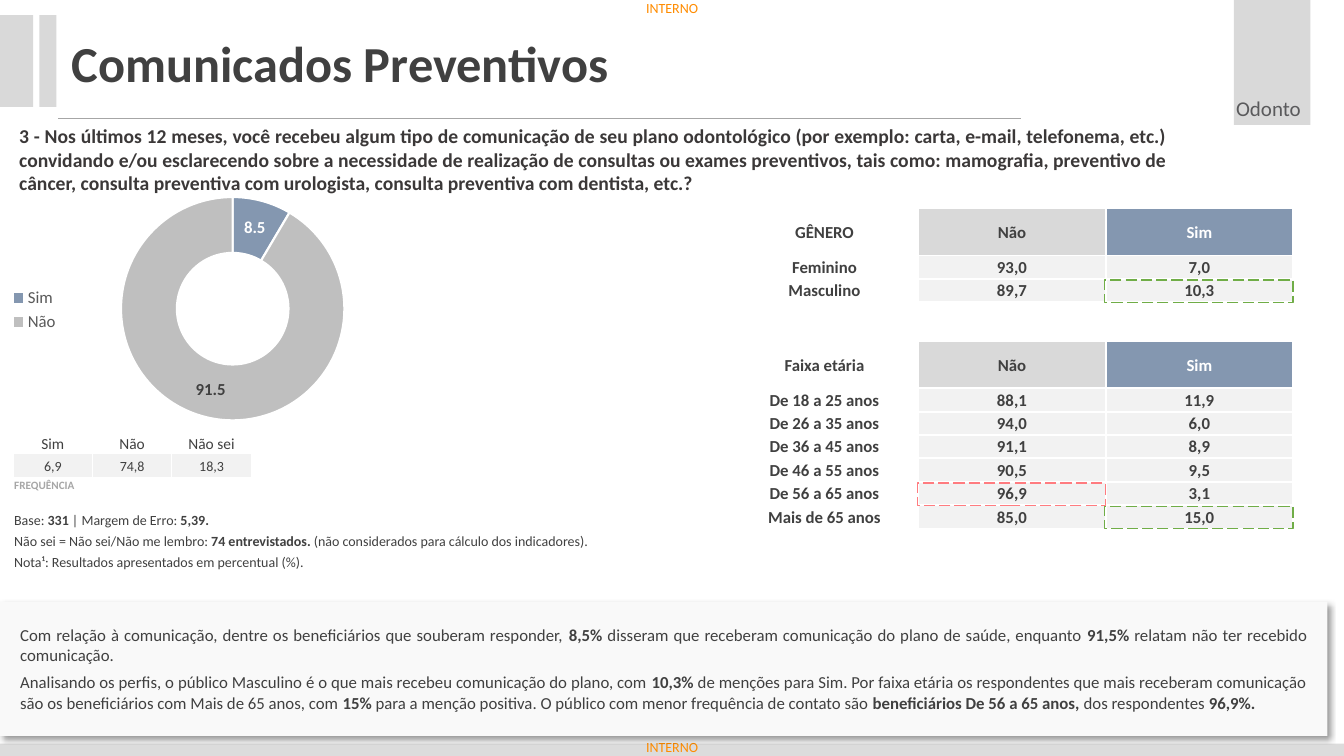
from lxml import etree
from pptx import Presentation
from pptx.chart.data import CategoryChartData
from pptx.dml.color import RGBColor
from pptx.enum.chart import XL_CHART_TYPE, XL_LEGEND_POSITION
from pptx.enum.dml import MSO_LINE
from pptx.enum.shapes import MSO_CONNECTOR, MSO_SHAPE
from pptx.enum.text import MSO_ANCHOR as ANCHOR, PP_ALIGN as ALIGN
from pptx.oxml import parse_xml
from pptx.oxml.ns import nsdecls, qn
from pptx.util import Pt

COLORS = {
    "text": "404040", "question": "3B3838", "tag": "FF8C00", "area": "5A5A5C",
    "muted": "A6A6A6", "legend": "595959", "block": "D9D9D9", "footer": "DCDCDC",
    "cell": "F2F2F2", "panel": "F9F9F9", "sim": "8497B0", "nao": "BFBFBF",
    "white": "FFFFFF", "high": "70AD47", "low": "FF7C80",
}

QUESTION = (
    "3 - Nos últimos 12 meses, você recebeu algum tipo de comunicação de seu plano odontológico "
    "(por exemplo: carta, e-mail, telefonema, etc.) convidando e/ou esclarecendo sobre a necessidade "
    "de realização de consultas ou exames preventivos, tais como: mamografia, preventivo de câncer, "
    "consulta preventiva com urologista, consulta preventiva com dentista, etc.?")
PROFILE = [
    ("GÊNERO", "Não", "Sim"),
    ("Feminino", "93,0", "7,0"),
    ("Masculino", "89,7", "10,3"),
    ("", "", ""),
    ("Faixa etária", "Não", "Sim"),
    ("De 18 a 25 anos", "88,1", "11,9"),
    ("De 26 a 35 anos", "94,0", "6,0"),
    ("De 36 a 45 anos", "91,1", "8,9"),
    ("De 46 a 55 anos", "90,5", "9,5"),
    ("De 56 a 65 anos", "96,9", "3,1"),
    ("Mais de 65 anos", "85,0", "15,0"),
]
HIGHLIGHTS = [(2, 2, "high"), (9, 1, "low"), (10, 2, "high")]
FREQUENCY = [("Sim", "Não", "Não sei"), ("6,9", "74,8", "18,3"), ("FREQUÊNCIA", "", "")]
NOTES = [
    "Base: **331** | Margem de Erro: **5,39.**",
    "Não sei = Não sei/Não me lembro: **74 entrevistados.** (não considerados para cálculo dos indicadores).",
    "Nota¹: Resultados apresentados em percentual (%).",
]
ANALYSIS = [
    "Com relação à comunicação, dentre os beneficiários que souberam responder, **8,5%** disseram que "
    "receberam comunicação do plano de saúde, enquanto **91,5%** relatam não ter recebido comunicação.",
    "Analisando os perfis, o público Masculino é o que mais recebeu comunicação do plano, com **10,3% **de "
    "menções para Sim. Por faixa etária os respondentes que mais receberam comunicação são os beneficiários "
    "com Mais de 65 anos, com **15% **para a menção positiva. O público com menor frequência de contato são "
    "**beneficiários De 56 a 65 anos, **dos respondentes **96,9%.**",
]


def rgb(name):
    return RGBColor.from_string(COLORS[name])


def set_font(font, size, color="text", bold=False):
    for key, value in {"name": "Calibri", "size": Pt(size), "bold": bold}.items():
        setattr(font, key, value)
    font.color.rgb = rgb(color)


def write(p, text, size, color="text", bold=False, align=ALIGN.LEFT):
    """Fill a paragraph; text between double asterisks is bold."""
    p.alignment = align
    for i, part in enumerate(text.split("**")):
        if part:
            r = p.add_run()
            r.text = part
            set_font(r.font, size, color, bold or i % 2 == 1)


def set_frame(tf, insets=(7.2, 3.6), wrap=True, anchor=ANCHOR.TOP):
    x, y = (Pt(v) for v in insets)
    values = {"margin_left": x, "margin_right": x, "margin_top": y, "margin_bottom": y,
              "word_wrap": wrap, "vertical_anchor": anchor}
    for key, value in values.items():
        setattr(tf, key, value)


def add_text(slide, box, text, size, color, bold=False, align=ALIGN.LEFT, **frame):
    tf = slide.shapes.add_textbox(*map(Pt, box)).text_frame
    set_frame(tf, **frame)
    write(tf.paragraphs[0], text, size, color, bold, align)


def add_rect(slide, box, fill=None):
    sp = slide.shapes.add_shape(MSO_SHAPE.RECTANGLE, *map(Pt, box))
    sp.shadow.inherit = False
    if fill:
        sp.fill.solid()
        sp.fill.fore_color.rgb = rgb(fill)
        sp.line.fill.background()
    else:
        sp.fill.background()
    return sp


def add_frame(slide, width, height):
    """Footer band, corner blocks, rule and confidentiality tags."""
    add_rect(slide, (0, height - 8.8, width, 8.8), "footer")
    for box in [(-0.7, 10.8, 24.5, 65.5), (28.1, 10.8, 12.2, 65.5), (881.3, 0, 54.7, 89.3)]:
        add_rect(slide, box, "block")
    rule = slide.shapes.add_connector(MSO_CONNECTOR.STRAIGHT, Pt(41.8), Pt(84.3), Pt(729.4), Pt(84.3))
    rule.line.color.rgb = rgb("muted")
    rule.line.width = Pt(0.5)
    etree.SubElement(rule.element.spPr, qn("a:effectLst"))
    for top in (0, height - 12.2):
        add_text(slide, (461.5, top, 39.6, 12.2), "INTERNO", 10, "tag", insets=(0, 0), wrap=False)


def add_heading(slide, box):
    title = slide.shapes.title
    title.left, title.top, title.width, title.height = map(Pt, box)
    set_frame(title.text_frame)
    write(title.text_frame.paragraphs[0], "Comunicados Preventivos", 36, bold=True)


def add_grid(slide, left, top, col_widths, row_heights, border):
    """Table without style bands, with white borders of the given width."""
    box = (left, top, sum(col_widths), sum(row_heights))
    table = slide.shapes.add_table(len(row_heights), len(col_widths), *map(Pt, box)).table
    table.first_row = table.horz_banding = False
    for col, w in zip(table.columns, col_widths):
        col.width = Pt(w)
    for row, h in zip(table.rows, row_heights):
        row.height = Pt(h)
    for cell in table.iter_cells():
        cell.margin_left = cell.margin_right = cell.margin_top = Pt(0.7)
        cell.margin_bottom = 0
        tc_pr = cell._tc.get_or_add_tcPr()
        for side in ("lnL", "lnR", "lnT", "lnB"):
            tc_pr.append(parse_xml(
                f'<a:{side} {nsdecls("a")} w="{int(Pt(border))}"><a:solidFill>'
                f'<a:srgbClr val="{COLORS["white"]}"/></a:solidFill></a:{side}>'))
        cell.fill.background()
    return table


def fill_cell(cell, text, size, fill=None, anchor=ANCHOR.MIDDLE, align=ALIGN.CENTER, **font):
    cell.vertical_anchor = anchor
    write(cell.text_frame.paragraphs[0], text, size, align=align, **font)
    if fill:
        cell.fill.solid()
        cell.fill.fore_color.rgb = rgb(fill)


def add_profile(slide, left, top, width):
    """Results by gender and age, with dashed frames on the notable cells."""
    col, line = width / 3, 16.7
    heights = [{0: 33.5, 3: 28, 4: 33.5}.get(i, line) for i in range(len(PROFILE))]
    table = add_grid(slide, left, top, [col] * 3, heights, 1.5)
    table.cell(3, 0).merge(table.cell(3, 2))
    for i, row in enumerate(PROFILE):
        fills = (None, "block", "sim") if i in (0, 4) else (None, "cell", "cell")
        for j, (text, fill) in enumerate(zip(row, fills)):
            if text:
                color = "white" if fill == "sim" else "text"
                fill_cell(table.cell(i, j), text, 12, fill, color=color, bold=True)
    for i, j, color in HIGHLIGHTS:
        sp = add_rect(slide, (left + j * col - 0.7, top + sum(heights[:i]) + 0.8, col + 0.7, line - 0.7))
        sp.line.color.rgb = rgb(color)
        sp.line.width = Pt(1)
        sp.line.dash_style = MSO_LINE.LONG_DASH


def add_frequency(slide, left, top, width):
    table = add_grid(slide, left, top, [width / 3] * 3, [14.6, 17.2, 17.2], 1)
    table.cell(2, 0).merge(table.cell(2, 2))
    for j in range(3):
        fill_cell(table.cell(0, j), FREQUENCY[0][j], 11, anchor=ANCHOR.BOTTOM)
        fill_cell(table.cell(1, j), FREQUENCY[1][j], 10, "cell")
    fill_cell(table.cell(2, 0), FREQUENCY[2][0], 8, anchor=ANCHOR.TOP, align=ALIGN.LEFT,
              color="muted", bold=True)


def add_notes(slide, left, top, width):
    table = add_grid(slide, left, top, [width], [15] * len(NOTES), 1)
    for i, note in enumerate(NOTES):
        fill_cell(table.cell(i, 0), note, 10, anchor=ANCHOR.TOP, align=ALIGN.LEFT)


def add_doughnut(slide, box):
    data = CategoryChartData(number_format="0.0")
    data.categories = ["Sim", "Não"]
    data.add_series("Series 1", (8.5, 91.5))
    chart = slide.shapes.add_chart(XL_CHART_TYPE.DOUGHNUT, *map(Pt, box), data).chart
    chart.has_title = False
    set_font(chart.font, 10)
    chart.has_legend = True
    chart.legend.position = XL_LEGEND_POSITION.LEFT
    chart.legend.include_in_layout = False
    set_font(chart.legend.font, 12, "legend")
    plot = chart.plots[0]
    plot.vary_by_categories = True
    plot._element.find(qn("c:holeSize")).set("val", "50")
    series = plot.series[0]
    labels = series.data_labels
    for key, value in {"show_value": True, "show_percentage": False, "number_format": "0.0",
                       "number_format_is_linked": False}.items():
        setattr(labels, key, value)
    set_font(labels.font, 12, "white", True)
    for i, color in enumerate(("sim", "nao")):
        fmt = series.points[i].format
        fmt.fill.solid()
        fmt.fill.fore_color.rgb = rgb(color)
        fmt.line.color.rgb = rgb("white")
        fmt.line.width = Pt(1.5)
    set_font(series.points[1].data_label.font, 12, "text", True)
    area = chart._chartSpace.chart.plotArea
    for old in area.findall(qn("c:layout")):
        area.remove(old)
    sizes = "".join(f'<c:{k} val="{v}"/>' for k, v in {"x": 0.3, "y": 0.05, "w": 0.56, "h": 0.89}.items())
    area.insert(0, parse_xml(
        f'<c:layout {nsdecls("c")}><c:manualLayout><c:layoutTarget val="inner"/><c:xMode val="edge"/>'
        f'<c:yMode val="edge"/>{sizes}</c:manualLayout></c:layout>'))


def add_analysis(slide, box):
    sp = add_rect(slide, box, "panel")
    shadow = etree.SubElement(sp.element.spPr.find(qn("a:effectLst")), qn("a:outerShdw"), {
        "blurRad": str(int(Pt(4))), "dist": str(int(Pt(3))), "dir": "2700000", "algn": "tl", "rotWithShape": "0"})
    color = etree.SubElement(shadow, qn("a:srgbClr"), val="000000")
    etree.SubElement(color, qn("a:alpha"), val="40000")
    tf = sp.text_frame
    set_frame(tf, (14.4, 2.9), anchor=ANCHOR.MIDDLE)
    for i, text in enumerate(ANALYSIS):
        p = tf.add_paragraph() if i else tf.paragraphs[0]
        p.space_before = Pt(4.9 if i else 0)
        write(p, text, 12, align=ALIGN.JUSTIFY)


def main():
    prs = Presentation()
    prs.slide_width, prs.slide_height = Pt(960), Pt(540)
    slide = prs.slides.add_slide(prs.slide_layouts[5])
    add_frame(slide, 960, 540)
    add_heading(slide, (43.9, 19.4, 418.3, 51.1))
    add_text(slide, (871.2, 64.8, 69.8, 25.2), "Odonto", 15, "area", align=ALIGN.CENTER)
    add_text(slide, (5.8, 84.2, 835.9, 59), QUESTION, 14, "question", True, ALIGN.JUSTIFY, insets=(7.9, 4.3))
    add_profile(slide, 522, 149, 401.7)
    add_frequency(slide, 9.4, 309.6, 170)
    add_notes(slide, 9.4, 365, 510.5)
    add_analysis(slide, (0, 429.8, 948.2, 95.8))
    add_doughnut(slide, (0, 131.8, 286.6, 179.3))
    prs.save("out.pptx")


if __name__ == "__main__":
    main()
